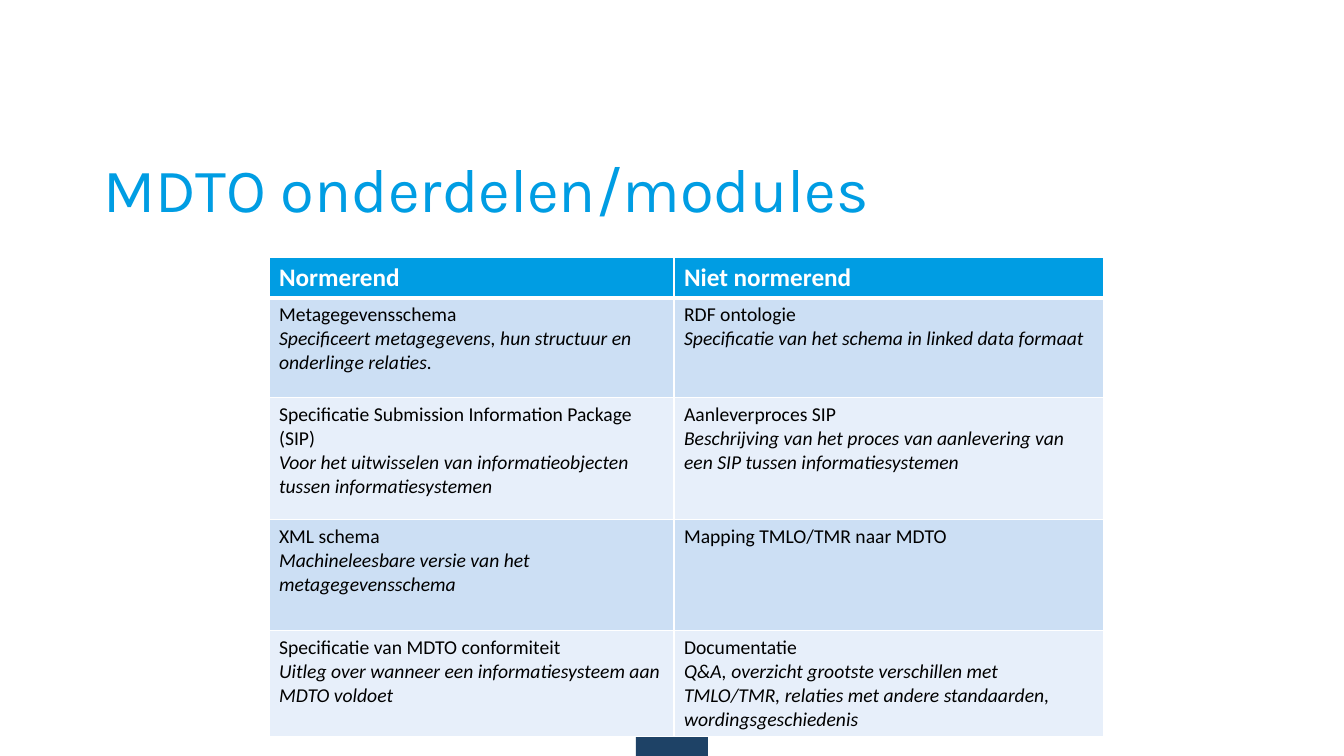
from lxml import etree
from pptx import Presentation
from pptx.dml.color import RGBColor
from pptx.enum.shapes import MSO_SHAPE
from pptx.enum.text import MSO_ANCHOR, PP_ALIGN
from pptx.oxml.ns import qn
from pptx.util import Pt

PX = 12192000 / 1344
RECTANGLE = MSO_SHAPE.RECTANGLE
MIDDLE = MSO_ANCHOR.MIDDLE
LEFT = PP_ALIGN.LEFT
TITLE_ONLY = 5

BLUE, NAVY, WHITE, BLACK = "009DE3", "1E4266", "FFFFFF", "000000"
BANDS = ("CCDFF4", "E7EFFA")

HEADINGS = ("Normerend", "Niet normerend")
COLUMN_WIDTHS = (405, 430)
ROW_HEIGHTS = (40, 100, 122, 111, 105)
# Each module is a name with an explanation
MODULES = [
    (("Metagegevensschema",
      "Specificeert metagegevens, hun structuur en onderlinge relaties."),
     ("RDF ontologie",
      "Specificatie van het schema in linked data formaat")),
    (("Specificatie Submission Information Package (SIP)",
      "Voor het uitwisselen van informatieobjecten tussen informatiesystemen"),
     ("Aanleverproces SIP",
      "Beschrijving van het proces van aanlevering van een SIP tussen informatiesystemen")),
    (("XML schema",
      "Machineleesbare versie van het metagegevensschema"),
     ("Mapping TMLO/TMR naar MDTO", "")),
    (("Specificatie van MDTO conformiteit",
      "Uitleg over wanneer een informatiesysteem aan MDTO voldoet"),
     ("Documentatie",
      "Q&A, overzicht grootste verschillen met TMLO/TMR, relaties met andere "
      "standaarden, wordingsgeschiedenis")),
]


def px(length):
    return round(length * PX)


def color(hex_value):
    return RGBColor.from_string(hex_value)


def set_font(font, name, size, hex_value, bold=False):
    font.name, font.size, font.bold = name, Pt(size), bold
    font.color.rgb = color(hex_value)


def set_borders(cell, bottom_width):
    properties = cell._tc.get_or_add_tcPr()
    widths = {"a:lnL": 1, "a:lnR": 1, "a:lnT": 1, "a:lnB": bottom_width}
    for position, (tag, width) in enumerate(widths.items()):
        line = etree.Element(qn(tag), w=str(Pt(width)))
        fill = etree.SubElement(line, qn("a:solidFill"))
        etree.SubElement(fill, qn("a:srgbClr"), val=WHITE)
        properties.insert(position, line)


def add_title(slide, left, top, width, height):
    title = slide.shapes.title
    title.left, title.top, title.width, title.height = map(px, (left, top, width, height))
    title.text_frame.text = "MDTO onderdelen/modules"
    title.text_frame.vertical_anchor = MIDDLE
    heading = title.text_frame.paragraphs[0]
    heading.alignment = LEFT
    heading.line_spacing = 0.9
    set_font(heading.font, "Karla", 44, BLUE)


def fill_cell(cell, name, explanation, fill, size, text_color, bold, bottom_width):
    cell.fill.solid()
    cell.fill.fore_color.rgb = color(fill)
    set_borders(cell, bottom_width)
    paragraph = cell.text_frame.paragraphs[0]
    set_font(paragraph.font, "Calibri", size, text_color, bold)
    paragraph.add_run().text = name
    if explanation:
        paragraph.add_line_break()
        detail = paragraph.add_run()
        detail.text = explanation
        detail.font.italic = True


def add_modules_table(slide, left, top):
    table = slide.shapes.add_table(
        len(ROW_HEIGHTS), len(COLUMN_WIDTHS), px(left), px(top),
        px(sum(COLUMN_WIDTHS)), px(sum(ROW_HEIGHTS))).table
    table.horz_banding = False
    for column, width in zip(table.columns, COLUMN_WIDTHS):
        column.width = px(width)
    for row, height in zip(table.rows, ROW_HEIGHTS):
        row.height = px(height)

    # Header row
    for column, heading in enumerate(HEADINGS):
        fill_cell(table.cell(0, column), heading, "", BLUE, 18, WHITE, True, 3)

    # Module rows in alternating bands
    for index, modules in enumerate(MODULES):
        for column, (name, explanation) in enumerate(modules):
            fill_cell(table.cell(index + 1, column), name, explanation,
                      BANDS[index % 2], 14, BLACK, False, 1)


def add_footer_block(slide, left, top, width, height):
    block = slide.shapes.add_shape(RECTANGLE, *map(px, (left, top, width, height)))
    block.shadow.inherit = False
    block.fill.solid()
    block.fill.fore_color.rgb = color(NAVY)
    block.line.fill.background()


def main():
    deck = Presentation()
    deck.slide_width, deck.slide_height = px(1344), px(756)
    slide = deck.slides.add_slide(deck.slide_layouts[TITLE_ONLY])
    slide.background.fill.solid()
    slide.background.fill.fore_color.rgb = color(WHITE)
    add_footer_block(slide, 636, 737, 72, 19)
    add_title(slide, 93, 129, 1159, 127)
    add_modules_table(slide, 269, 257)
    deck.save("out.pptx")


if __name__ == "__main__":
    main()
